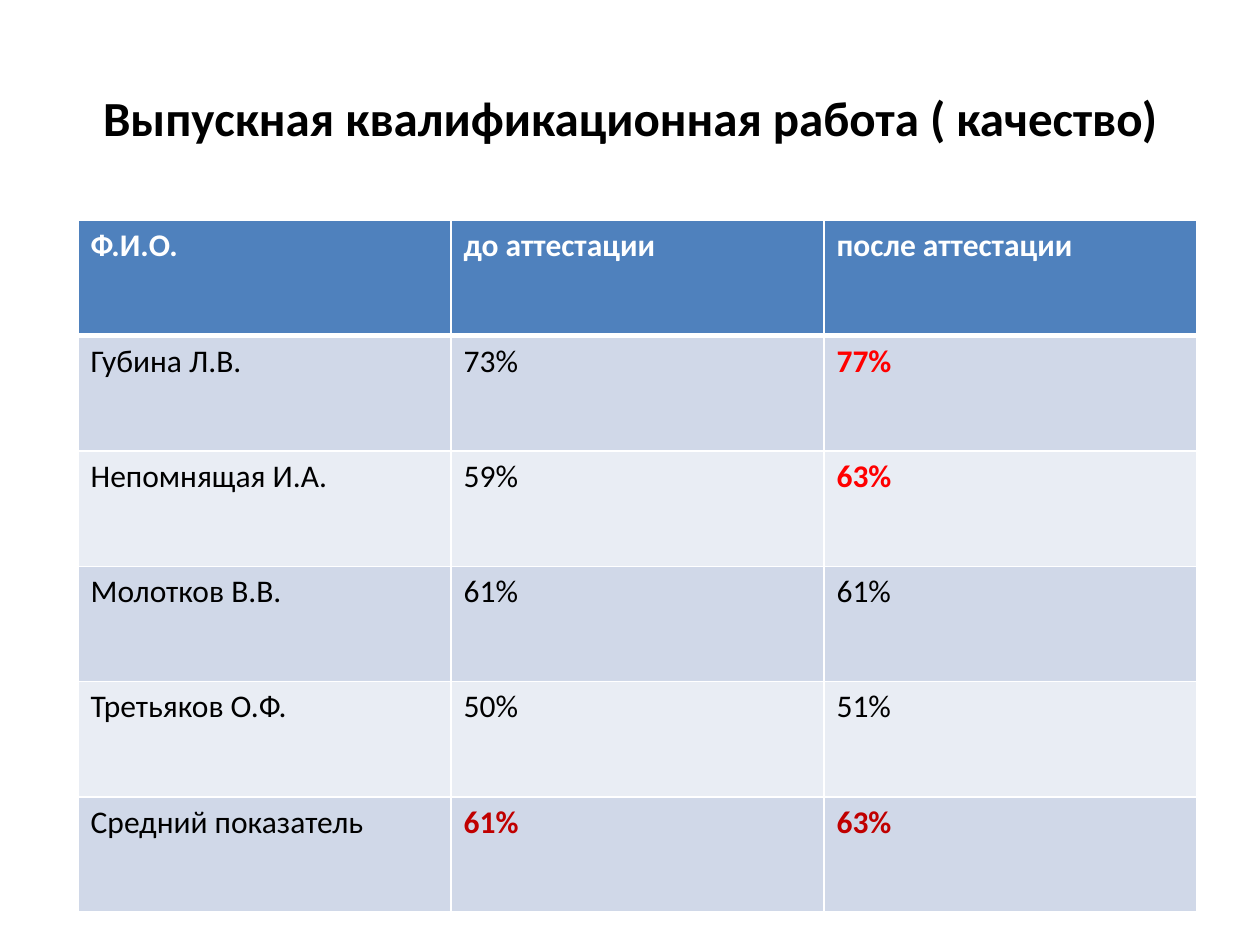
from pptx import Presentation
from pptx.util import Inches, Pt
from pptx.dml.color import RGBColor as RGB
from pptx.enum.text import PP_ALIGN as Align, MSO_ANCHOR as Anchor
from lxml.etree import fromstring

COLORS = {
    "white": "FFFFFF",
    "black": "000000",
    "head": "4F81BD",
    "dark": "D0D8E8",
    "light": "E9EDF4",
    "red": "FF0000",
    "mean": "C00000",
}
NS = "http://schemas.openxmlformats.org/drawingml/2006/main"

HEAD = ["Ф.И.О.", "до аттестации", "после аттестации"]
ROWS = [
    ["Губина Л.В.", "73%", "77%"],
    ["Непомнящая И.А.", "59%", "63%"],
    ["Молотков В.В.", "61%", "61%"],
    ["Третьяков О.Ф.", "50%", "51%"],
    ["Средний показатель", "61%", "63%"],
]
# Highlighted cells: (row, column) -> colour
MARKS = {(1, 2): "red", (2, 2): "red", (5, 1): "mean", (5, 2): "mean"}


def write(frame, text, size=18, color="black", bold=False, align=None,
          font="Calibri"):
    par = frame.paragraphs[0]
    par.alignment = align
    run = par.add_run()
    run.text = text
    run.font.name = font
    run.font.size = Pt(size)
    run.font.bold = bold
    run.font.color.rgb = RGB.from_string(COLORS[color])


class Deck:
    def __init__(self):
        self.prs = Presentation()
        self.prs.slide_width = Inches(10)
        self.prs.slide_height = Inches(7.5)
        # Title-only layout
        self.slide = self.prs.slides.add_slide(self.prs.slide_layouts[5])

    def title(self, text, left, top, width, height):
        box = self.slide.shapes.title
        box.left, box.top = Inches(left), Inches(top)
        box.width, box.height = Inches(width), Inches(height)
        box.text_frame.vertical_anchor = Anchor.MIDDLE
        write(box.text_frame, text, size=28, bold=True, align=Align.CENTER)

    def border(self, cell, **widths):
        props = cell._tc.get_or_add_tcPr()
        for spot, side in enumerate("LRTB"):
            props.insert(spot, fromstring(
                f'<a:ln{side} xmlns:a="{NS}" w="{Pt(widths.get(side, 1))}">'
                f'<a:solidFill><a:srgbClr val="{COLORS["white"]}"/>'
                f'</a:solidFill></a:ln{side}>'))

    def cell(self, cell, text, fill, **style):
        cell.fill.solid()
        cell.fill.fore_color.rgb = RGB.from_string(COLORS[fill])
        write(cell.text_frame, text, **style)

    def table(self, data, marks, left, top, width, height):
        grid = self.slide.shapes.add_table(
            len(data), len(data[0]), Inches(left), Inches(top),
            Inches(width), Inches(height)).table
        for r, row in enumerate(data):
            for c, text in enumerate(row):
                cell = grid.cell(r, c)
                if r == 0:
                    self.cell(cell, text, "head", color="white", bold=True)
                    self.border(cell, B=3)
                else:
                    fill = "dark" if r % 2 else "light"
                    self.cell(cell, text, fill, bold=(r, c) in marks,
                              color=marks.get((r, c), "black"))
                    self.border(cell, T=3 if r == 1 else 1)


def main():
    deck = Deck()
    # Heading
    deck.title("Выпускная квалификационная работа ( качество)",
               0.5, 0.3, 9, 1.25)
    # Results before and after certification
    deck.table([HEAD] + ROWS, MARKS, 0.62, 1.75, 8.88, 5.49)
    deck.prs.save("out.pptx")


if __name__ == "__main__":
    main()
